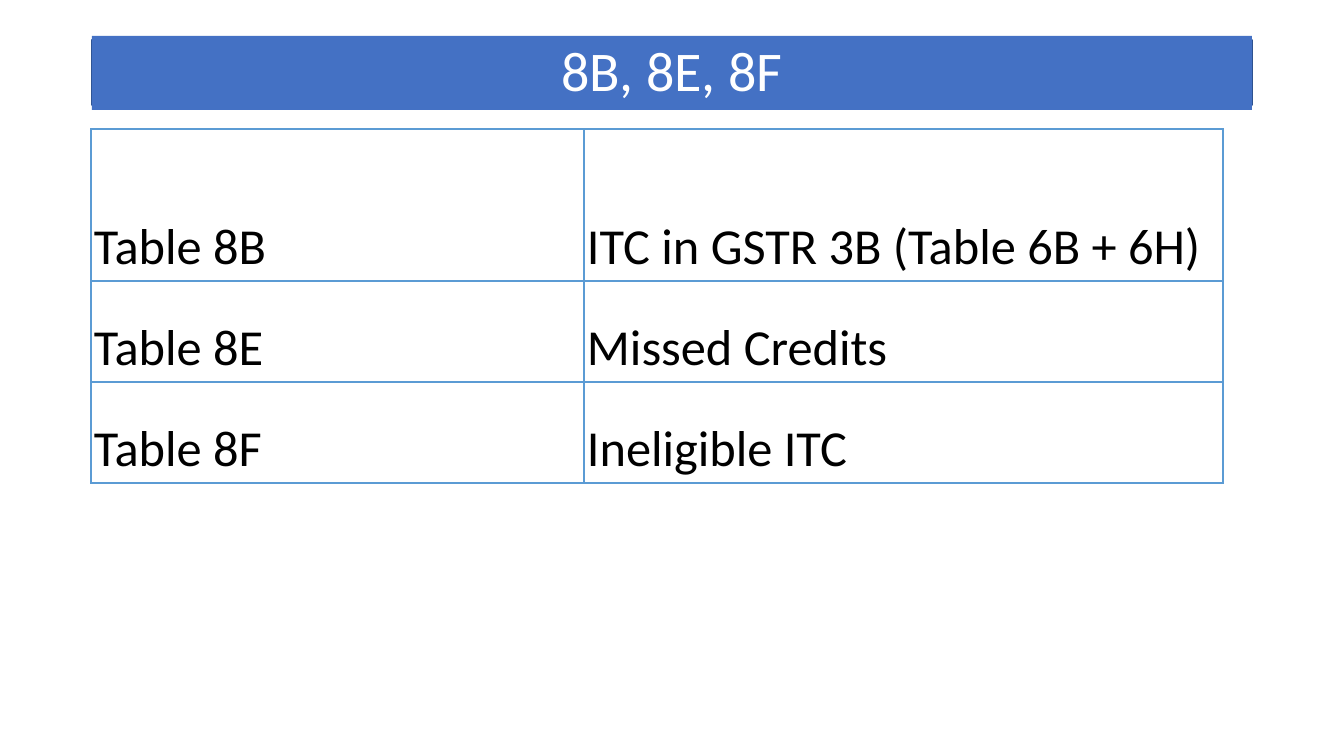
import pptx
import pptx.util
import pptx.dml.color
import pptx.enum.shapes
import pptx.enum.text
import pptx.oxml
import pptx.oxml.ns
from dataclasses import dataclass

TITLE = "8B, 8E, 8F"
ROWS = [
    ("Table 8B", "ITC in GSTR 3B (Table 6B + 6H)"),
    ("Table 8E", "Missed Credits"),
    ("Table 8F", "Ineligible ITC"),
]
COLUMN_WIDTHS = [493, 639]
ROW_HEIGHTS = [152, 101, 101]
BANNER = (92, 36, 1160, 74)
OUTLINE = (92, 40, 1160, 65)
TABLE_LEFT, TABLE_TOP = 91, 129
CELL_MARGIN = 3


@dataclass(frozen=True)
class Theme:
    font: str = "Calibri"
    banner: str = "4471C4"
    outline: str = "2E528F"
    border: str = "5B9BD4"
    title_text: str = "FFFFFF"
    body_text: str = "000000"
    title_size: int = 40
    title_leading: int = 42
    body_size: int = 36


THEME = Theme()


def px(length):
    return pptx.util.Emu(round(length * 914400 / 100.8))


def rgb(value):
    return pptx.dml.color.RGBColor.from_string(value)


def format_text(para, size, color):
    for span in para.runs:
        span.font.name = THEME.font
        span.font.size = pptx.util.Pt(size)
        span.font.bold = False
        span.font.color.rgb = rgb(color)


def add_borders(cell):
    properties = cell._tc.get_or_add_tcPr()
    namespace = pptx.oxml.ns.nsdecls("a")
    for index, side in enumerate(("lnL", "lnR", "lnT", "lnB")):
        border = pptx.oxml.parse_xml(
            f'<a:{side} {namespace} w="12700"><a:solidFill>'
            f'<a:srgbClr val="{THEME.border}"/></a:solidFill></a:{side}>'
        )
        properties.insert(index, border)


def add_banner(page):
    outline = page.shapes.add_shape(
        pptx.enum.shapes.MSO_SHAPE.RECTANGLE, *map(px, OUTLINE)
    )
    outline.shadow.inherit = False
    outline.fill.background()
    outline.line.color.rgb = rgb(THEME.outline)
    outline.line.width = pptx.util.Pt(0.96)

    title = page.shapes.title
    title.left, title.top, title.width, title.height = map(px, BANNER)
    title.fill.solid()
    title.fill.fore_color.rgb = rgb(THEME.banner)
    outline._element.addnext(title._element)
    frame = title.text_frame
    frame.text = TITLE
    frame.auto_size = pptx.enum.text.MSO_AUTO_SIZE.NONE
    frame.vertical_anchor = pptx.enum.text.MSO_ANCHOR.MIDDLE
    frame.margin_left = frame.margin_right = 0
    frame.margin_top = frame.margin_bottom = 0
    para = frame.paragraphs[0]
    para.alignment = pptx.enum.text.PP_ALIGN.CENTER
    para.line_spacing = pptx.util.Pt(THEME.title_leading)
    format_text(para, THEME.title_size, THEME.title_text)


def add_credit_table(page):
    table = page.shapes.add_table(
        len(ROWS), len(COLUMN_WIDTHS), px(TABLE_LEFT), px(TABLE_TOP),
        px(sum(COLUMN_WIDTHS)), px(sum(ROW_HEIGHTS)),
    ).table
    table.first_row = table.horz_banding = False
    for column, width in zip(table.columns, COLUMN_WIDTHS):
        column.width = px(width)
    for row, height, texts in zip(table.rows, ROW_HEIGHTS, ROWS):
        row.height = px(height)
        for cell, text in zip(row.cells, texts):
            cell.text_frame.text = text
            cell.fill.background()
            cell.vertical_anchor = pptx.enum.text.MSO_ANCHOR.BOTTOM
            cell.margin_left = cell.margin_bottom = px(CELL_MARGIN)
            cell.margin_right = cell.margin_top = 0
            format_text(cell.text_frame.paragraphs[0], THEME.body_size, THEME.body_text)
            add_borders(cell)


def main():
    deck = pptx.Presentation()
    deck.slide_width = px(1344)
    deck.slide_height = px(756)
    page = deck.slides.add_slide(deck.slide_layouts[5])
    add_banner(page)
    add_credit_table(page)
    deck.save("out.pptx")


if __name__ == "__main__":
    main()
